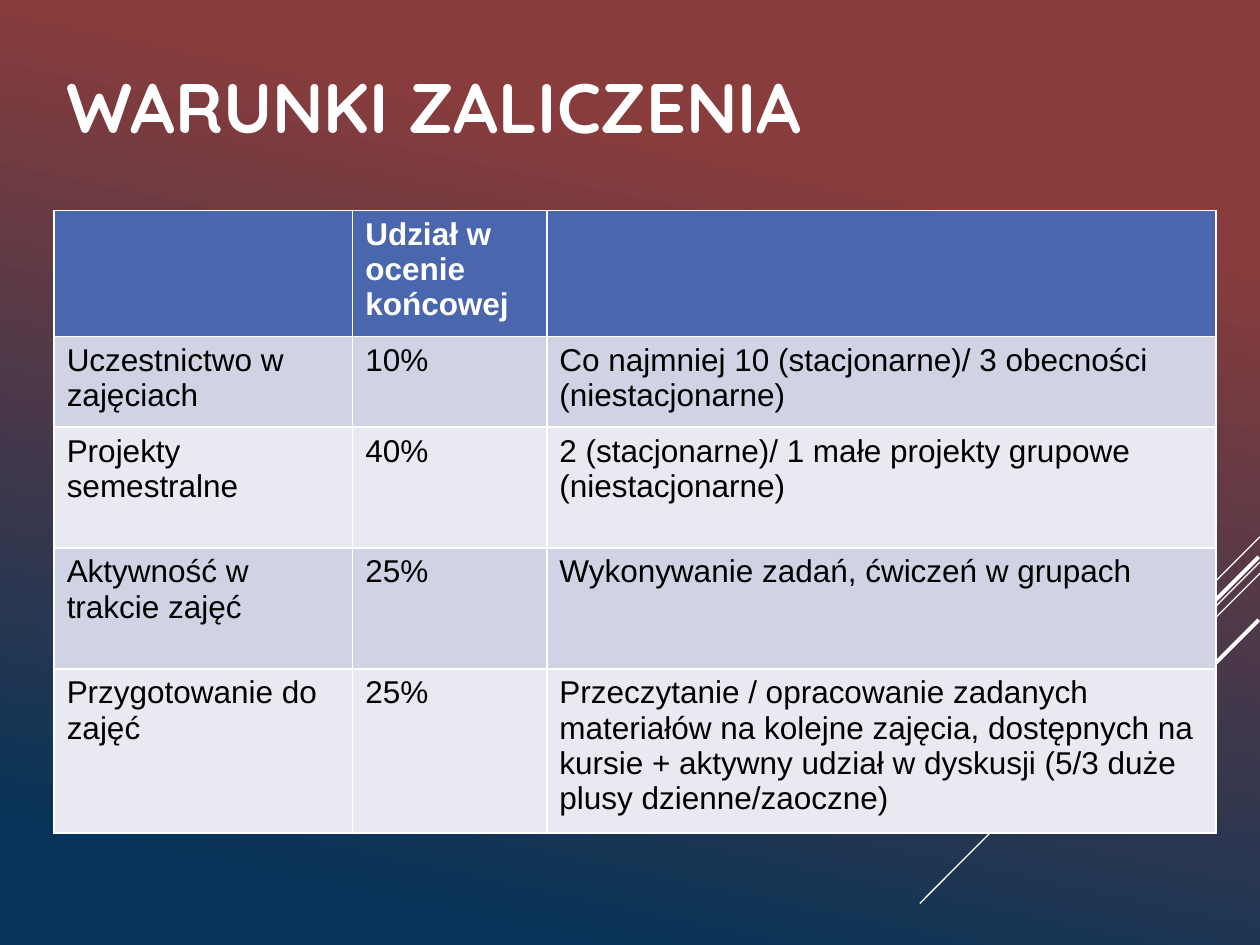
from typing import NamedTuple

from lxml import etree
from pptx import Presentation
from pptx import util as u
from pptx.dml.color import RGBColor
from pptx.enum import shapes, text
from pptx.oxml.ns import qn

WHITE, BLACK = "FFFFFF", "000000"
HEADER, BANDS = "4A66AC", ("D0D3E3", "E9EAF1")
BACKGROUND = ((0.22, "883C3C"), (0.9, "073458"))
BODY = {"name": "Arial", "size": u.Pt(18), "bold": False}
TITLE = {"name": "Quicksand", "size": u.Pt(40), "bold": True}

COLUMN_WIDTHS = (2.37, 1.54, 5.31)
ROW_HEIGHTS = (0.61, 0.72, 0.96, 0.96, 1.28)
ROWS = (
    ("", "Udział w ocenie końcowej", ""),
    ("Uczestnictwo w zajęciach", "10%",
     "Co najmniej 10 (stacjonarne)/ 3 obecności (niestacjonarne)"),
    ("Projekty semestralne", "40%",
     "2 (stacjonarne)/ 1 małe projekty grupowe (niestacjonarne)"),
    ("Aktywność w trakcie zajęć", "25%",
     "Wykonywanie zadań, ćwiczeń w grupach"),
    ("Przygotowanie do zajęć", "25%",
     "Przeczytanie / opracowanie zadanych materiałów na kolejne zajęcia, "
     "dostępnych na kursie + aktywny udział w dyskusji "
     "(5/3 duże plusy dzienne/zaoczne)"),
)


class Streak(NamedTuple):
    x1: float
    y1: float
    x2: float
    y2: float
    weight: float


STREAKS = (
    Streak(10, 4.26, 9.17, 5.09, 0.75),
    Streak(10, 4.46, 7.3, 7.17, 0.75),
    Streak(10, 4.55, 8.28, 6.27, 0.75),
    Streak(9.99, 4.42, 8.42, 5.99, 2.25),
    Streak(9.99, 4.92, 8.85, 6.06, 2.25),
)


def rgb(value: str) -> RGBColor:
    return RGBColor.from_string(value)


def set_background(s) -> None:
    fill = s.background.fill
    fill.gradient()
    fill.gradient_angle = 258
    for stop, (position, color) in zip(fill.gradient_stops, BACKGROUND):
        stop.position = position
        stop.color.rgb = rgb(color)


def draw_streak(s, streak: Streak) -> None:
    ends = map(u.Inches, streak[:4])
    line = s.shapes.add_connector(shapes.MSO_CONNECTOR.STRAIGHT, *ends)
    line.line.color.rgb = rgb(WHITE)
    line.line.width = u.Pt(streak.weight)
    etree.SubElement(line._element.spPr, qn("a:effectLst"))


def write(tf, content: str, font: dict, color: str) -> None:
    r = tf.paragraphs[0].add_run()
    r.text = content
    for name, value in font.items():
        setattr(r.font, name, value)
    r.font.color.rgb = rgb(color)


def draw_title(s) -> None:
    sp = s.shapes.add_textbox(*map(u.Inches, (0.43, 0, 7.17, 1.67)))
    tf = sp.text_frame
    tf.word_wrap = True
    tf.vertical_anchor = text.MSO_ANCHOR.MIDDLE
    write(tf, "WARUNKI ZALICZENIA", TITLE, WHITE)


def draw_table(s) -> None:
    """Draw the grading table; its default style supplies the white borders."""
    frame = s.shapes.add_table(
        len(ROWS), len(COLUMN_WIDTHS), u.Inches(0.43), u.Inches(1.67),
        u.Inches(sum(COLUMN_WIDTHS)), u.Inches(sum(ROW_HEIGHTS)))
    table = frame.table
    for column, width in zip(table.columns, COLUMN_WIDTHS):
        column.width = u.Inches(width)
    for i, (row, height, contents) in enumerate(
            zip(table.rows, ROW_HEIGHTS, ROWS)):
        row.height = u.Inches(height)
        is_header = i == 0
        for cell, content in zip(row.cells, contents):
            cell.fill.solid()
            cell.fill.fore_color.rgb = rgb(
                HEADER if is_header else BANDS[(i - 1) % 2])
            if content:
                write(cell.text_frame, content, BODY | {"bold": is_header},
                      WHITE if is_header else BLACK)


def main() -> None:
    prs = Presentation()
    prs.slide_width, prs.slide_height = u.Inches(10), u.Inches(7.5)
    s = prs.slides.add_slide(prs.slide_layouts[6])
    set_background(s)
    for streak in STREAKS:
        draw_streak(s, streak)
    draw_title(s)
    draw_table(s)
    prs.save("out.pptx")


if __name__ == "__main__":
    main()
